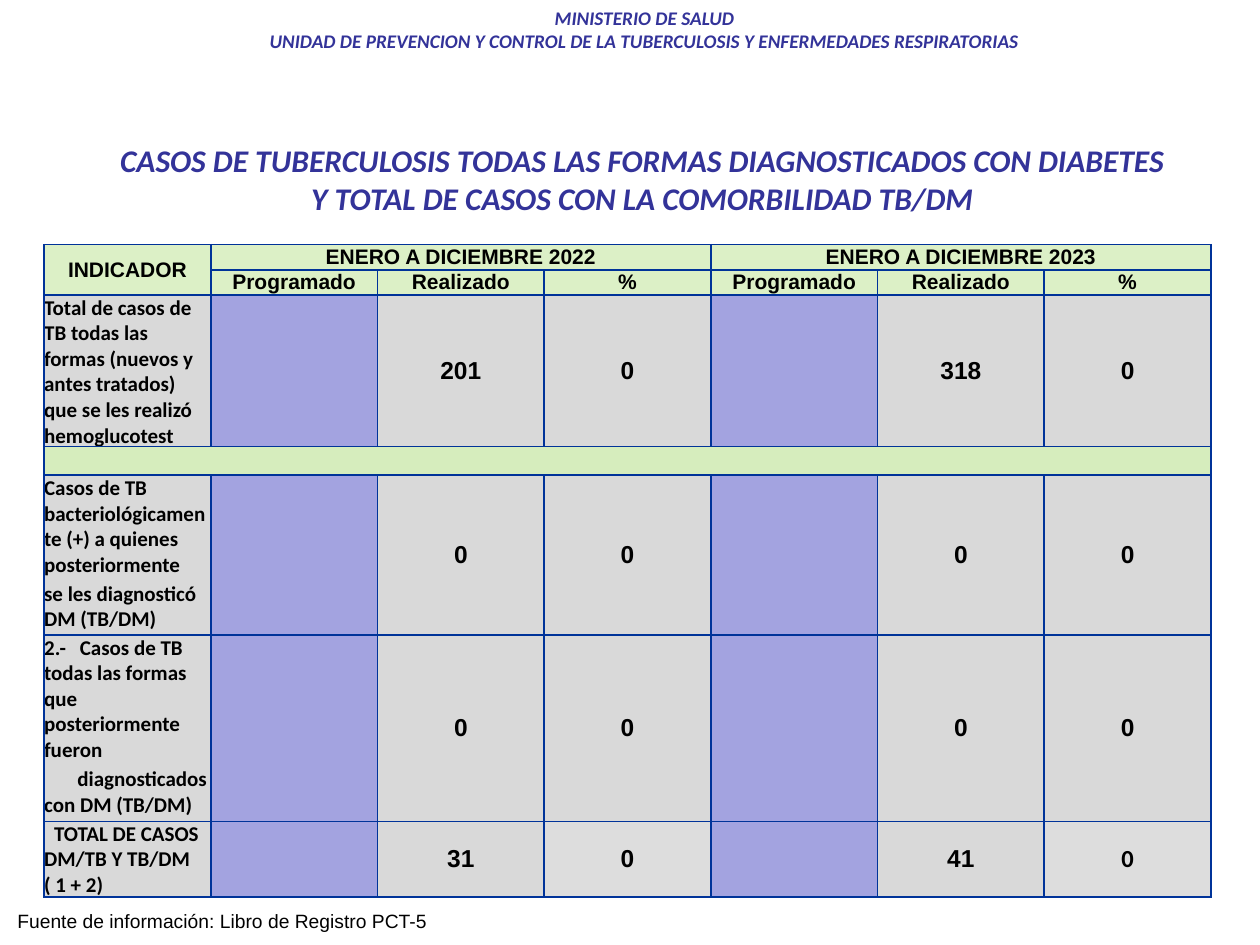
from lxml.etree import SubElement
from pptx import Presentation
from pptx.dml.color import RGBColor
from pptx.enum.text import MSO_ANCHOR, PP_ALIGN
from pptx.oxml.ns import qn
from pptx.util import Cm, Pt

# Content
MINISTRY = [["MINISTERIO DE SALUD",
             "UNIDAD DE PREVENCION Y CONTROL DE LA TUBERCULOSIS Y ENFERMEDADES RESPIRATORIAS"]]
TITLE = [["CASOS DE TUBERCULOSIS TODAS LAS FORMAS DIAGNOSTICADOS CON DIABETES"],
         ["Y TOTAL DE CASOS CON LA COMORBILIDAD TB/DM"]]
SOURCE = [["Fuente de información: Libro de Registro PCT-5"]]
YEARS = ["ENERO A DICIEMBRE 2022", "ENERO A DICIEMBRE 2023"]
MEASURES = ["Programado", "Realizado", "%"]
# Each indicator: first row, label parts (text, first-line indent in cm), values
INDICATORS = [
    (2, [("Total de casos de TB todas las formas (nuevos y antes tratados) "
          "que se les realizó hemoglucotest", 0)], ["", "201", "0", "", "318", "0"]),
    (4, [("Casos de TB bacteriológicamente (+) a quienes posteriormente", 0),
         ("se les diagnosticó DM (TB/DM)", 0)], ["", "0", "0", "", "0", "0"]),
    (6, [("2.-\tCasos de TB todas las formas que posteriormente fueron", 0),
         ("diagnosticados con DM (TB/DM)", 0.67)], ["", "0", "0", "", "0", "0"]),
    (8, [("TOTAL DE CASOS DM/TB Y TB/DM ( 1 + 2)", 0.2)], ["", "31", "0", "", "41", "0"]),
]
SEPARATOR_ROW = 3
ROW_HEIGHTS = [0.51, 0.51, 3.05, 0.58, 2.08, 1.14, 2.59, 1.17, 1.52]
COLUMN_WIDTH = 3.36
NUMBER_TAB = 0.72

THEME = {
    "heading": "333399", "text": "000000", "border": "003399",
    "header": "DCF0C6", "separator": "D6EDBD", "planned": "A3A3E0",
    "body": "D9D9D9", "total_percent": "DDDDDD",
    "sans": "Arial", "label": "Calibri",
    "small": 11, "cell": 12, "value": 14, "title": 18,
}


def style(font, face, size, color, bold=False, italic=False):
    font.name, font.size = THEME[face], Pt(THEME[size])
    font.color.rgb = RGBColor.from_string(THEME[color])
    font.bold, font.italic = bold, italic


def add_text(slide, box, paragraphs, align, *look):
    frame = slide.shapes.add_textbox(*map(Cm, box)).text_frame
    frame.word_wrap = True
    for i, lines in enumerate(paragraphs):
        paragraph = frame.add_paragraph() if i else frame.paragraphs[0]
        paragraph.alignment = align
        for j, line in enumerate(lines):
            if j:
                paragraph.add_line_break()
            run = paragraph.add_run()
            run.text = line
            style(run.font, *look)


def set_borders(cell, hidden):
    properties = cell._tc.get_or_add_tcPr()
    for side in "LRTB":
        line = SubElement(properties, qn(f"a:ln{side}"), w=str(Pt(1)))
        if side == hidden:
            SubElement(line, qn("a:noFill"))
        else:
            fill = SubElement(line, qn("a:solidFill"))
            SubElement(fill, qn("a:srgbClr"), val=THEME["border"])


def fill_cell(cell, text, fill, face="sans", size="cell",
              align=PP_ALIGN.CENTER, indent=0):
    cell.margin_left = cell.margin_right = cell.margin_top = cell.margin_bottom = 0
    cell.vertical_anchor = MSO_ANCHOR.MIDDLE
    cell.fill.solid()
    cell.fill.fore_color.rgb = RGBColor.from_string(THEME[fill])
    paragraph = cell.text_frame.paragraphs[0]
    paragraph.alignment = align
    if not text:
        # An empty cell keeps a small line so that its row does not grow
        SubElement(paragraph._p, qn("a:endParaRPr"), sz=str(THEME["cell"] * 100))
        return
    properties = paragraph._p.get_or_add_pPr()
    if indent:
        properties.set("indent", str(Cm(indent)))
    if "\t" in text:
        tabs = SubElement(properties, qn("a:tabLst"))
        SubElement(tabs, qn("a:tab"), pos=str(Cm(NUMBER_TAB)), algn="l")
    run = paragraph.add_run()
    run.text = text
    style(run.font, face, size, "text", bold=True)


def merge(table, row, column, rows, columns):
    table.cell(row, column).merge(table.cell(row + rows - 1, column + columns - 1))


def add_case_table(slide):
    group = len(MEASURES)
    column_count = 1 + len(YEARS) * group
    table = slide.shapes.add_table(
        len(ROW_HEIGHTS), column_count, Cm(0.89), Cm(4.93),
        Cm(COLUMN_WIDTH * column_count), Cm(sum(ROW_HEIGHTS))).table
    table.first_row = table.horz_banding = False
    for column in table.columns:
        column.width = Cm(COLUMN_WIDTH)
    for row, height in zip(table.rows, ROW_HEIGHTS):
        row.height = Cm(height)

    # Borders, open between the two parts of a split label
    split_rows = [first for first, parts, _ in INDICATORS if len(parts) == 2]
    for r in range(len(ROW_HEIGHTS)):
        for c in range(column_count):
            hidden = None
            if c == 0:
                hidden = "B" if r in split_rows else "T" if r - 1 in split_rows else None
            set_borders(table.cell(r, c), hidden)

    # Header rows
    merge(table, 0, 0, 2, 1)
    fill_cell(table.cell(0, 0), "INDICADOR", "header")
    for y, year in enumerate(YEARS):
        start = 1 + y * group
        merge(table, 0, start, 1, group)
        fill_cell(table.cell(0, start), year, "header")
        for m, measure in enumerate(MEASURES):
            fill_cell(table.cell(1, start + m), measure, "header")

    # Separator band
    merge(table, SEPARATOR_ROW, 0, 1, column_count)
    fill_cell(table.cell(SEPARATOR_ROW, 0), "", "separator")

    # Indicator rows
    total_row = INDICATORS[-1][0]
    for first, parts, values in INDICATORS:
        for offset, (label, indent) in enumerate(parts):
            fill_cell(table.cell(first + offset, 0), label, "body", "label",
                      align=PP_ALIGN.LEFT, indent=indent)
        for c, value in enumerate(values, start=1):
            if len(parts) > 1:
                merge(table, first, c, len(parts), 1)
            is_total_percent = first == total_row and c % group == 0
            fill = ("planned" if not value else
                    "total_percent" if is_total_percent else "body")
            face = "label" if is_total_percent and c == len(values) else "sans"
            fill_cell(table.cell(first, c), value, fill, face, "value")


def main():
    deck = Presentation()
    deck.slide_width, deck.slide_height = Cm(25.4), Cm(19.05)
    slide = deck.slides.add_slide(deck.slide_layouts[6])

    # Headings and source line
    add_text(slide, (3.89, 0, 18.21, 1.68), MINISTRY, PP_ALIGN.CENTER,
             "label", "small", "heading", True, True)
    add_text(slide, (1.52, 2.72, 22.86, 1.6), TITLE, PP_ALIGN.CENTER,
             "label", "title", "heading", True, True)
    add_text(slide, (0.1, 18.21, 17.2, 0.74), SOURCE, PP_ALIGN.LEFT,
             "sans", "small", "text")

    add_case_table(slide)
    deck.save("out.pptx")


if __name__ == "__main__":
    main()
